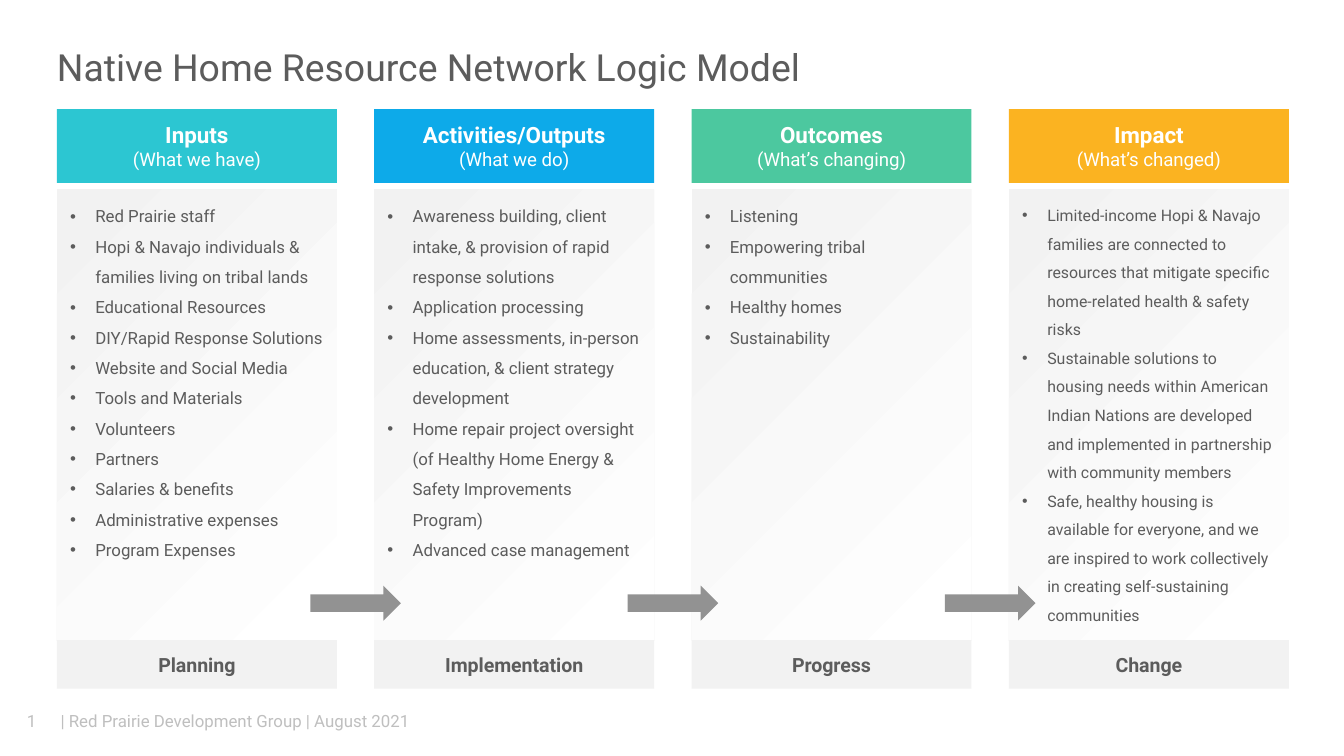
from lxml import etree
from pptx import Presentation
from pptx.dml.color import RGBColor
from pptx.enum.shapes import MSO_SHAPE
from pptx.enum.text import MSO_ANCHOR, PP_ALIGN
from pptx.oxml import parse_xml
from pptx.oxml.ns import nsdecls, qn
from pptx.util import Pt

FONT = "Roboto"
COLORS = {
    "text": "5C5C5C", "muted": "BFBFBF", "white": "FFFFFF",
    "panel": "F2F2F2", "arrow": "929292",
    "teal": "2CC6D2", "blue": "0DAAE9", "green": "4CC89F", "amber": "FBB321",
}

# Heading, subheading, colour, stage, bullet size, bullets
COLUMNS = [
    ("Inputs", "(What we have)", "teal", "Planning", 9, [
        "Red Prairie staff",
        "Hopi & Navajo individuals & families living on tribal lands",
        "Educational Resources",
        "DIY/Rapid Response Solutions",
        "Website and Social Media",
        "Tools and Materials",
        "Volunteers",
        "Partners",
        "Salaries & benefits",
        "Administrative expenses",
        "Program Expenses",
    ]),
    ("Activities/Outputs", "(What we do)", "blue", "Implementation", 9, [
        "Awareness building, client intake, & provision of rapid response solutions",
        "Application processing",
        "Home assessments, in-person education, & client strategy development",
        "Home repair project oversight (of Healthy Home Energy & Safety Improvements Program)",
        "Advanced case management",
    ]),
    ("Outcomes", "(What’s changing)", "green", "Progress", 9, [
        "Listening",
        "Empowering tribal communities",
        "Healthy homes",
        "Sustainability",
    ]),
    ("Impact", "(What’s changed)", "amber", "Change", 8.5, [
        "Limited-income Hopi & Navajo families are connected to resources that "
        "mitigate specific home-related health & safety risks",
        "Sustainable solutions to housing needs within American Indian Nations are "
        "developed and implemented in partnership with community members",
        "Safe, healthy housing is available for everyone, and we are inspired to work "
        "collectively in creating self-sustaining communities",
    ]),
]


def rgb(name):
    return RGBColor.from_string(COLORS[name])


def style(r, size, color, bold=False):
    r.font.name = FONT
    r.font.size = Pt(size)
    r.font.bold = bold
    r.font.color.rgb = rgb(color)


def add_box(s, x, y, w, h, color, shape=MSO_SHAPE.RECTANGLE):
    sp = s.shapes.add_shape(shape, Pt(x), Pt(y), Pt(w), Pt(h))
    sp.shadow.inherit = False
    sp.line.fill.background()
    sp.fill.solid()
    sp.fill.fore_color.rgb = rgb(color)
    sp.text_frame.word_wrap = True
    return sp


def add_label(s, x, y, w, h, text, size, color, align=PP_ALIGN.LEFT):
    tf = s.shapes.add_textbox(Pt(x), Pt(y), Pt(w), Pt(h)).text_frame
    tf.margin_left = tf.margin_right = tf.margin_top = tf.margin_bottom = 0
    tf.word_wrap = True
    tf.vertical_anchor = MSO_ANCHOR.MIDDLE
    p = tf.paragraphs[0]
    p.text = text
    p.alignment = align
    style(p.runs[0], size, color)


def add_caption(sp, lines):
    """Centre (text, size, colour, bold) lines in a shape."""
    tf = sp.text_frame
    tf.vertical_anchor = MSO_ANCHOR.MIDDLE
    p = tf.paragraphs[0]
    p.alignment = PP_ALIGN.CENTER
    for i, (text, *look) in enumerate(lines):
        if i:
            p.add_line_break()
        r = p.add_run()
        r.text = text
        style(r, *look)


def fill_corner_gradient(sp):
    """Shade from white at the bottom right to grey at the top left."""
    sp.fill.gradient()
    for stop, color, position in zip(sp.fill.gradient_stops, ("white", "panel"), (0, 1)):
        stop.color.rgb = rgb(color)
        stop.position = position
    grad = sp._element.spPr.find(qn("a:gradFill"))
    grad.replace(grad.find(qn("a:lin")), parse_xml(
        f'<a:path {nsdecls("a")} path="circle">'
        '<a:fillToRect l="100000" t="100000"/></a:path>'))


def add_bullets(tf, items, size):
    tf.vertical_anchor = MSO_ANCHOR.TOP
    for i, item in enumerate(items):
        p = tf.add_paragraph() if i else tf.paragraphs[0]
        p.text = item
        p.alignment = PP_ALIGN.LEFT
        p.line_spacing = 1.5
        pPr = p._p.get_or_add_pPr()
        pPr.set("marL", str(Pt(13.5)))
        pPr.set("indent", str(Pt(-13.5)))
        etree.SubElement(pPr, qn("a:buFont")).set("typeface", "Arial")
        etree.SubElement(pPr, qn("a:buChar")).set("char", "•")
        style(p.runs[0], size, "text")


def add_column(s, x, y, w, h, column):
    heading, subheading, color, stage, size, items = column
    header_h, gap, stage_h = 39.5, 3.5, 26
    body_h = h - header_h - gap - stage_h

    # Coloured header
    header = add_box(s, x, y, w, header_h, color)
    add_caption(header, [(heading, 12, "white", True), (subheading, 10, "white")])

    # Bulleted body
    body = add_box(s, x, y + header_h + gap, w, body_h, "panel")
    fill_corner_gradient(body)
    add_bullets(body.text_frame, items, size)

    # Stage name
    footer = add_box(s, x, y + h - stage_h, w, stage_h, "panel")
    add_caption(footer, [(stage, 10.5, "text", True)])


def add_model(s, x, y, w, h):
    col_w = 150
    gap = (w - col_w * len(COLUMNS)) / (len(COLUMNS) - 1)
    lefts = [x + i * (col_w + gap) for i in range(len(COLUMNS))]
    for left, column in zip(lefts, COLUMNS):
        add_column(s, left, y, col_w, h, column)

    # Arrows centred on the gaps between columns
    arrow_w, arrow_h = 48.5, 18.7
    for left in lefts[1:]:
        add_box(s, left - gap / 2 - arrow_w / 2, y + h - 55.2, arrow_w, arrow_h,
                "arrow", MSO_SHAPE.RIGHT_ARROW)


def add_footer(s, x, y, w, h):
    add_label(s, x, y, 31, h, "1", 9, "muted", PP_ALIGN.CENTER)
    add_label(s, x + 31, y, w - 31, h,
              "| Red Prairie Development Group | August 2021", 9, "muted")


def main():
    prs = Presentation()
    prs.slide_width, prs.slide_height = Pt(720), Pt(405)
    s = prs.slides.add_slide(prs.slide_layouts[6])
    add_footer(s, 1.5, 375, 227, 22)
    add_label(s, 30.5, 22.5, 659, 26, "Native Home Resource Network Logic Model", 20, "text")
    add_model(s, 30.5, 58.5, 660, 310.5)
    prs.save("out.pptx")


if __name__ == "__main__":
    main()
